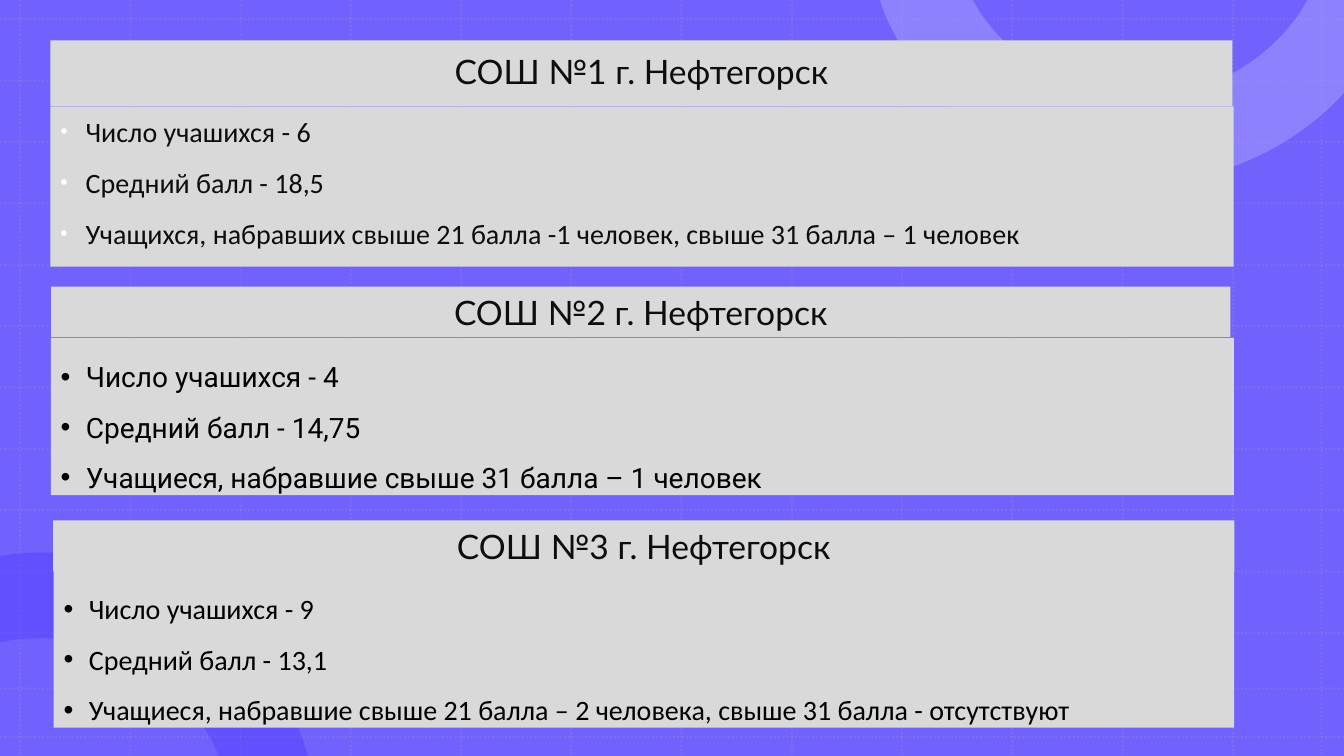
from lxml import etree
from pptx import Presentation
from pptx.dml.color import RGBColor
from pptx.enum.dml import MSO_LINE
from pptx.enum.shapes import MSO_CONNECTOR, MSO_SHAPE
from pptx.enum.text import MSO_ANCHOR, MSO_AUTO_SIZE, PP_ALIGN
from pptx.oxml.ns import qn
from pptx.util import Pt

STRAIGHT = MSO_CONNECTOR.STRAIGHT
RECTANGLE = MSO_SHAPE.RECTANGLE
DOTTED = MSO_LINE.ROUND_DOT
TOP, MIDDLE = MSO_ANCHOR.TOP, MSO_ANCHOR.MIDDLE
FIXED = MSO_AUTO_SIZE.NONE
LEFT, CENTER = PP_ALIGN.LEFT, PP_ALIGN.CENTER

WIDTH, HEIGHT = 960, 540
COLORS = {
    "violet": "7162FE",
    "grid": "B495C2",
    "deep_arc": "220BFD",
    "light_arc": "AAA1FE",
    "panel": "D9D9D9",
    "heading": "0D0D0D",
    "black": "000000",
    "white": "FFFFFF",
}
LEFT_ARC = [
    (28.8, 394.6), (118, 394.6, 193.7, 453.6, 218.2, 534.2), (220.3, 540),
    (156.2, 540), (156.2, 539.3), (135.4, 490.3, 86.4, 455.8, 28.8, 455.8),
    (19.4, 455.8, 10, 456.5, 1.4, 458.6), (-0.7, 458.6), (-0.7, 397.4),
    (8.6, 396), (15.1, 395, 22.3, 394.6, 28.8, 394.6),
]
RIGHT_ARC = [
    (628.6, 0), (694.8, 0), (699.8, 8.6), (725, 45.4, 766.8, 69.1, 814.3, 69.1),
    (861.8, 69.1, 903.6, 45.4, 928.8, 8.6), (933.8, 0), (960, 0), (960, 66.2),
    (954.7, 72), (918.7, 108, 869, 130.3, 814.3, 130.3),
    (732.2, 130.3, 661.7, 79.9, 631.4, 8.6),
]


def rgb(name):
    """Return the named colour."""
    return RGBColor.from_string(COLORS[name])


def fill_plain(shape, color):
    """Give a shape a flat fill without line or shadow."""
    shape.shadow.inherit = False
    shape.fill.solid()
    shape.fill.fore_color.rgb = rgb(color)
    shape.line.fill.background()


def set_alpha(shape, percent):
    """Make the shape's solid colour partly transparent."""
    color = next(shape._element.spPr.iter(qn("a:srgbClr")))
    etree.SubElement(color, qn("a:alpha"), val=str(percent * 1000))


def add_grid_line(slide, x1, y1, x2, y2):
    """Draw one faint dotted line of the grid."""
    line = slide.shapes.add_connector(STRAIGHT, Pt(x1), Pt(y1), Pt(x2), Pt(y2))
    line.line.color.rgb = rgb("grid")
    line.line.width = Pt(1.5)
    line.line.dash_style = DOTTED
    set_alpha(line, 20)
    etree.SubElement(line._element.spPr, qn("a:effectLst"))
    return line


def add_arc(slide, outline, color, alpha):
    """Draw a translucent ring segment with cubic curves."""
    points = [(round(segment[i] * 100), round(segment[i + 1] * 100))
              for segment in outline for i in range(0, len(segment), 2)]
    builder = slide.shapes.build_freeform(*points[0], scale=Pt(1) / 100)
    builder.add_line_segments(points[1:], close=False)
    arc = builder.convert_to_shape()
    route = next(arc._element.iter(qn("a:pathLst")))[0]
    nodes = iter(list(route)[1:])
    for segment in outline[1:]:
        node = next(nodes)
        if len(segment) == 6:
            node.tag = qn("a:cubicBezTo")
            for control in (next(nodes), next(nodes)):
                node.append(control[0])
                route.remove(control)
    etree.SubElement(route, qn("a:close"))
    fill_plain(arc, color)
    set_alpha(arc, alpha)
    return arc


def add_backdrop(slide, width, height):
    """Put the violet ground, dotted grid and arcs on the slide master."""
    slide.background.fill.solid()
    slide.background.fill.fore_color.rgb = rgb("panel")
    ground = slide.shapes.add_shape(RECTANGLE, 0, 0, Pt(width), Pt(height))
    fill_plain(ground, "violet")
    parts = [ground]
    for x in [14.4 + 78.74 * i for i in range(12)] + [943.9]:
        parts.append(add_grid_line(slide, x, 0, x, height))
    for y in [13.7 + 43.85 * i for i in range(11)] + [491.8, 526.3]:
        parts.append(add_grid_line(slide, 0, y, width, y))
    parts.append(add_arc(slide, LEFT_ARC, "deep_arc", 20))
    parts.append(add_arc(slide, RIGHT_ARC, "light_arc", 50))
    master_tree = slide.slide_layout.slide_master.shapes._spTree
    for number, part in enumerate(parts, 100):
        next(part._element.iter(qn("p:cNvPr"))).set("id", str(number))
        master_tree.append(part._element)


def place_panel(slide, box, placeholder, anchor):
    """Place a grey text panel, in a placeholder if one is given."""
    lengths = [Pt(value) for value in box]
    if placeholder is None:
        panel = slide.shapes.add_textbox(*lengths)
    else:
        panel = placeholder
        panel.left, panel.top, panel.width, panel.height = lengths
    panel.fill.solid()
    panel.fill.fore_color.rgb = rgb("panel")
    frame = panel.text_frame
    frame.word_wrap = True
    frame.auto_size = FIXED
    frame.vertical_anchor = anchor
    return frame


def style_paragraph(paragraph, font, size, color, align, spacing, before):
    """Set the font and spacing of one paragraph."""
    paragraph.alignment = align
    paragraph.line_spacing = spacing
    paragraph.space_before = Pt(before)
    paragraph.font.name = font
    paragraph.font.size = Pt(size)
    paragraph.font.color.rgb = rgb(color)


def add_bullet(paragraph, color, percent):
    """Give a paragraph a hanging round bullet."""
    props = paragraph._p.get_or_add_pPr()
    props.set("marL", str(Pt(18)))
    props.set("indent", str(-Pt(18)))
    bullet_color = etree.SubElement(props, qn("a:buClr"))
    etree.SubElement(bullet_color, qn("a:srgbClr"), val=COLORS[color])
    etree.SubElement(props, qn("a:buSzPct"), val=str(percent * 1000))
    etree.SubElement(props, qn("a:buFont"), typeface="Arial")
    etree.SubElement(props, qn("a:buChar"), char="•")


def add_heading(slide, box, school, placeholder=None, spacing=1.0):
    """Write the school's name centred in its panel."""
    frame = place_panel(slide, box, placeholder, MIDDLE)
    frame.text = school
    style_paragraph(frame.paragraphs[0], "Lato", 24, "heading", CENTER, spacing, 0)


def add_results(slide, box, results, font, placeholder=None, color="black",
                bullet=("black", 100), spacing=1.5, before=0):
    """List the school's results in its panel."""
    frame = place_panel(slide, box, placeholder, TOP)
    frame.text = "\n".join(results)
    for index, paragraph in enumerate(frame.paragraphs):
        add_bullet(paragraph, *bullet)
        style_paragraph(paragraph, font, 20, color, LEFT, spacing, before if index else 0)


def main():
    """Build the slide of school results."""
    deck = Presentation()
    deck.slide_width, deck.slide_height = Pt(WIDTH), Pt(HEIGHT)
    slide = deck.slides.add_slide(deck.slide_layouts[1])
    title, body = slide.placeholders
    add_backdrop(slide, WIDTH, HEIGHT)

    add_heading(slide, (36, 28.8, 844.3, 47), "СОШ №1 г. Нефтегорск", title, 0.9)
    add_results(slide, (36, 75.9, 845.2, 114.6), [
        "Число учашихся - 6",
        "Средний балл - 18,5",
        "Учащихся, набравших свыше 21 балла -1 человек, свыше 31 балла – 1 человек",
    ], "Calibri", body, "heading", ("white", 75), 1.1, 10)

    add_heading(slide, (36.5, 204.8, 842.4, 36), "СОШ №2 г. Нефтегорск")
    add_results(slide, (36.3, 241.4, 845, 112.3), [
        "Число учашихся - 4",
        "Средний балл - 14,75",
        "Учащиеся, набравшие свыше 31 балла – 1 человек",
    ], "Roboto")

    add_heading(slide, (37.9, 371.7, 843.8, 36.3), "СОШ №3 г. Нефтегорск")
    add_results(slide, (38.4, 407.3, 843.2, 112.5), [
        "Число учашихся - 9",
        "Средний балл - 13,1",
        "Учащиеся, набравшие свыше 21 балла – 2 человека, свыше 31 балла - отсутствуют",
    ], "Calibri")
    deck.save("out.pptx")


if __name__ == "__main__":
    main()
